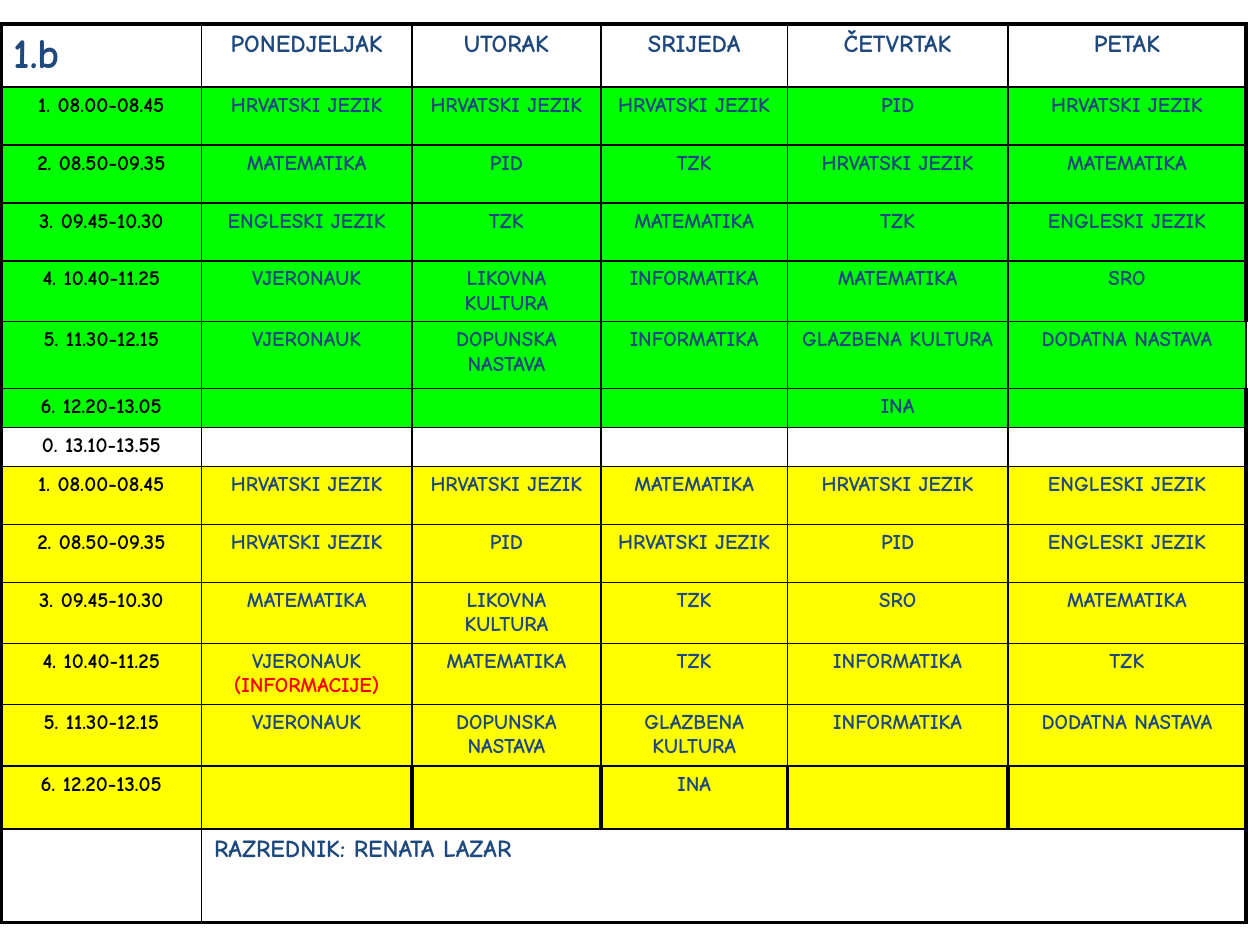
"""Build the weekly timetable of class 1.b as one table slide."""
import lxml.etree
import pptx
import pptx.dml.color
import pptx.enum.text
import pptx.oxml.ns
import pptx.util

BLUE = pptx.dml.color.RGBColor(0x1F, 0x49, 0x7D)
BLACK = pptx.dml.color.RGBColor(0, 0, 0)
RED = pptx.dml.color.RGBColor(0xFF, 0, 0)
GREEN = pptx.dml.color.RGBColor(0, 0xFF, 0)
YELLOW = pptx.dml.color.RGBColor(0xFF, 0xFF, 0)
FONT = "Comic Neue"
CENTER = pptx.enum.text.PP_ALIGN.CENTER
LEFT = pptx.enum.text.PP_ALIGN.LEFT
THIN, THICK = 1, 2.25

COLUMNS = [1.59, 1.67, 1.5, 1.48, 1.75, 1.89]
HEADER_HEIGHT, FOOTER_HEIGHT = 0.5, 0.74
DAYS = ["1.b", "PONEDJELJAK", "UTORAK", "SRIJEDA", "ČETVRTAK", "PETAK"]
FOOTER = ["", "RAZREDNIK: RENATA LAZAR", "", "", "", ""]
TIMES = ["1. 08.00-08.45", "2. 08.50-09.35", "3. 09.45-10.30",
         "4. 10.40-11.25", "5. 11.30-12.15", "6. 12.20-13.05"]
HRV, MAT, ENG = "HRVATSKI JEZIK", "MATEMATIKA", "ENGLESKI JEZIK"
PID, TZK, SRO, INA = "PID", "TZK", "SRO", "INA"
VJE, INF, LIK = "VJERONAUK", "INFORMATIKA", "LIKOVNA KULTURA"
GLA, DOP, DOD = "GLAZBENA KULTURA", "DOPUNSKA NASTAVA", "DODATNA NASTAVA"
NOTE = "(INFORMACIJE)"
MORNING = [
    (0.46, [HRV, HRV, HRV, PID, HRV]),
    (0.46, [MAT, PID, TZK, HRV, MAT]),
    (0.46, [ENG, TZK, MAT, TZK, ENG]),
    (0.46, [VJE, LIK, INF, MAT, SRO]),
    (0.53, [VJE, DOP, INF, GLA, DOD]),
    (0.31, ["", "", "", INA, ""]),
]
AFTERNOON = [
    (0.46, [HRV, HRV, MAT, HRV, ENG]),
    (0.46, [HRV, PID, HRV, PID, ENG]),
    (0.46, [MAT, LIK, TZK, SRO, MAT]),
    (0.46, [f"{VJE} {NOTE}", MAT, TZK, INF, TZK]),
    (0.49, [VJE, DOP, GLA, INF, DOD]),
    (0.5, ["", "", INA, "", ""]),
]


def timetable_rows():
    """Return height, fill and texts of every row."""
    def shift(lessons, fill):
        """Put the lesson times in front of one shift."""
        return [(height, fill, [time] + subjects)
                for time, (height, subjects) in zip(TIMES, lessons)]
    return ([(HEADER_HEIGHT, None, DAYS)]
            + shift(MORNING, GREEN)
            + [(0.31, None, ["0. 13.10-13.55"] + [""] * 5)]
            + shift(AFTERNOON, YELLOW)
            + [(FOOTER_HEIGHT, None, FOOTER)])


def add_span(para, text, size, color):
    """Add one formatted piece of text."""
    span = para.add_run()
    span.text = text
    formats = {"name": FONT, "size": pptx.util.Pt(size), "bold": True}
    for name, value in formats.items():
        setattr(span.font, name, value)
    span.font.color.rgb = color


def write_cell(cell, text, size, color, align):
    """Write the cell's text and set the note in red."""
    para = cell.text_frame.paragraphs[0]
    para.alignment = align
    subject, note, _ = text.partition(NOTE)
    for piece, shade in ((subject, color), (note, RED)):
        if piece:
            add_span(para, piece, size, shade)
    if not text:
        lxml.etree.SubElement(para._p, pptx.oxml.ns.qn("a:endParaRPr"),
                              sz=str(size * 100))


def draw_borders(cell, widths):
    """Draw the left, right, top and bottom borders in black."""
    properties = cell._tc.get_or_add_tcPr()
    qn = pptx.oxml.ns.qn
    for index, (side, width) in enumerate(zip("LRTB", widths)):
        line = lxml.etree.Element(qn(f"a:ln{side}"), w=str(pptx.util.Pt(width)))
        solid = lxml.etree.SubElement(line, qn("a:solidFill"))
        lxml.etree.SubElement(solid, qn("a:srgbClr"), val=str(BLACK))
        properties.insert(index, line)


def border_widths(row, column, last_row, last_column):
    """Return border widths: thick outside and between the last lessons."""
    dividers = row == last_row - 1
    left = column == 0 or (dividers and column > 1)
    right = (column == last_column and row != 5) or (dividers and column > 0)
    if row == last_row and column == 1:
        right = True
    edges = (left, right, row == 0, row == last_row)
    return [THICK if edge else THIN for edge in edges]


def text_format(row, column, last_row):
    """Return size, colour and alignment for a place in the table."""
    if row == 0 and column == 0:
        return 24, BLUE, LEFT
    if row in (0, last_row):
        return 14, BLUE, LEFT if row else CENTER
    return 12, BLUE if column else BLACK, CENTER


def add_timetable(page):
    """Add the whole timetable to the page."""
    rows = timetable_rows()
    inches = pptx.util.Inches
    last_row, last_column = len(rows) - 1, len(COLUMNS) - 1
    height = sum(row[0] for row in rows)
    table = page.shapes.add_table(
        len(rows), len(COLUMNS), inches(0.01), inches(0.19),
        inches(sum(COLUMNS)), inches(height)).table
    table.first_row = table.horz_banding = False
    for column, width in zip(table.columns, COLUMNS):
        column.width = inches(width)
    for row, (height, fill, texts) in enumerate(rows):
        table.rows[row].height = inches(height)
        for column, text in enumerate(texts):
            cell = table.cell(row, column)
            write_cell(cell, text, *text_format(row, column, last_row))
            if fill is None:
                cell.fill.background()
            else:
                cell.fill.solid()
                cell.fill.fore_color.rgb = fill
            draw_borders(cell, border_widths(row, column, last_row, last_column))
    table.cell(last_row, 1).merge(table.cell(last_row, last_column))


def main():
    """Create and save the deck."""
    deck = pptx.Presentation()
    deck.slide_width = pptx.util.Inches(10)
    deck.slide_height = pptx.util.Inches(7.5)
    add_timetable(deck.slides.add_slide(deck.slide_layouts[6]))
    deck.save("out.pptx")


if __name__ == "__main__":
    main()
